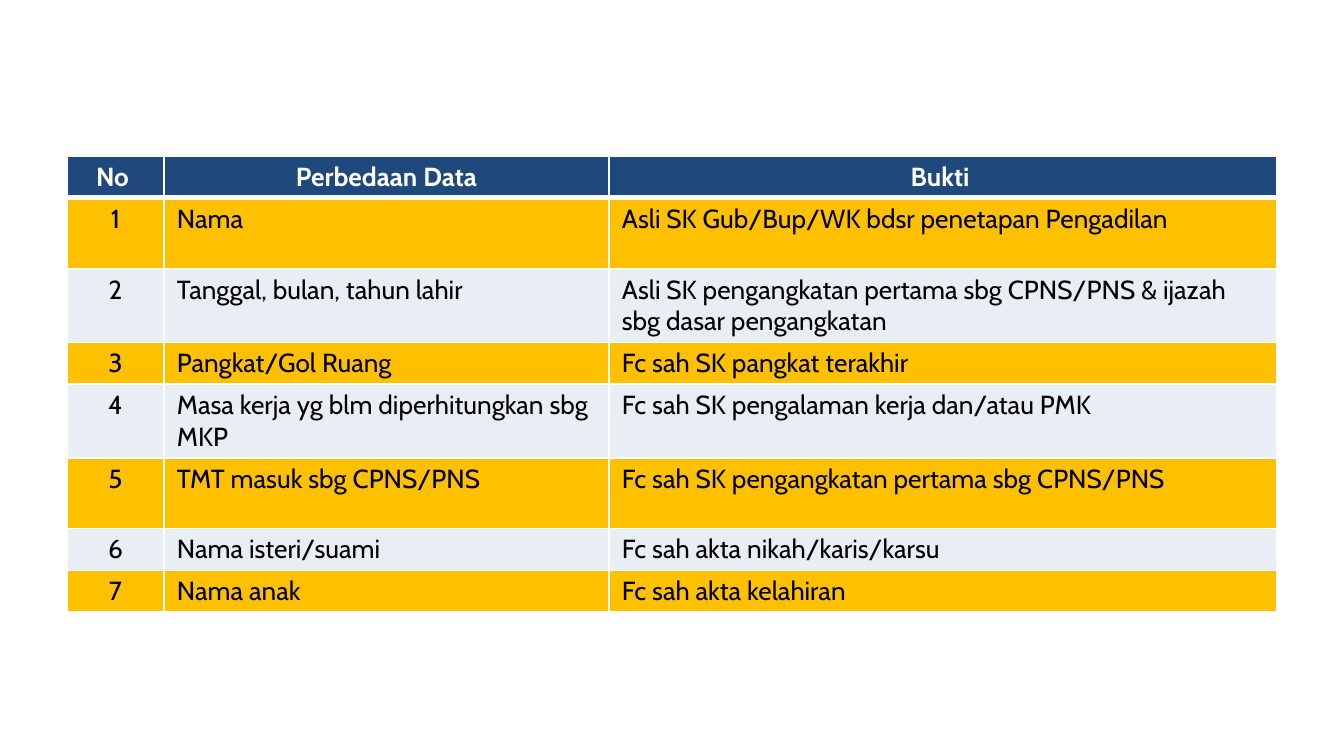
from dataclasses import dataclass
from lxml import etree
from pptx import Presentation
from pptx.dml.color import RGBColor
from pptx.enum import text
from pptx.oxml import ns
from pptx.util import Pt


@dataclass
class Theme:
    font: str = "Cabin"
    size: int = 14
    head: str = "1F497D"
    gold: str = "FFC000"
    pale: str = "E9EDF4"
    white: str = "FFFFFF"
    black: str = "000000"
    thin: int = 1
    thick: int = 3


theme = Theme()


def px(n):
    return round(n * 914400 / 134.4)


def border(cell, side, width):
    props = cell._tc.get_or_add_tcPr()
    line = etree.SubElement(props, ns.qn(f"a:ln{side}"), w=str(Pt(width)))
    fill = etree.SubElement(line, ns.qn("a:solidFill"))
    etree.SubElement(fill, ns.qn("a:srgbClr"), val=theme.white)


rows = [
    ("No ", "Perbedaan Data", "Bukti "),
    ("1", "Nama", "Asli SK Gub/Bup/WK bdsr penetapan Pengadilan"),
    ("2", "Tanggal, bulan, tahun lahir",
     "Asli SK pengangkatan pertama sbg CPNS/PNS & ijazah sbg dasar pengangkatan"),
    ("3", "Pangkat/Gol Ruang", "Fc sah SK pangkat terakhir"),
    ("4", "Masa kerja yg blm diperhitungkan sbg MKP",
     "Fc sah SK pengalaman kerja dan/atau PMK"),
    ("5", "TMT masuk sbg CPNS/PNS", "Fc sah SK pengangkatan pertama sbg CPNS/PNS"),
    ("6", "Nama isteri/suami", "Fc sah akta nikah/karis/karsu"),
    ("7", "Nama anak", "Fc sah akta kelahiran"),
]
widths = [97, 445, 668]
low, tall = 41, 71
heights = [low, tall, tall, low, tall, tall, low, low]

deck = Presentation()
deck.slide_width, deck.slide_height = px(1344), px(756)
slide = deck.slides.add_slide(deck.slide_layouts[6])

frame = slide.shapes.add_table(
    len(rows), len(widths), px(67), px(156), px(sum(widths)), px(sum(heights)))
table = frame.table
for col, width in zip(table.columns, widths):
    col.width = px(width)
for row, height in zip(table.rows, heights):
    row.height = px(height)

for r, words in enumerate(rows):
    top = r == 0
    shade = theme.head if top else theme.gold if r % 2 else theme.pale
    for c, word in enumerate(words):
        cell = table.cell(r, c)
        cell.margin_left = cell.margin_right = px(13)
        cell.margin_top = cell.margin_bottom = px(5)
        for side in "LRTB":
            border(cell, side, theme.thick if top and side == "B" else theme.thin)
        cell.fill.solid()
        cell.fill.fore_color.rgb = RGBColor.from_string(shade)
        para = cell.text_frame.paragraphs[0]
        para.text = word
        mid = top or c == 0
        para.alignment = text.PP_ALIGN.CENTER if mid else text.PP_ALIGN.LEFT
        font = para.runs[0].font
        font.name, font.size, font.bold = theme.font, Pt(theme.size), top
        font.color.rgb = RGBColor.from_string(theme.white if top else theme.black)

deck.save("out.pptx")
